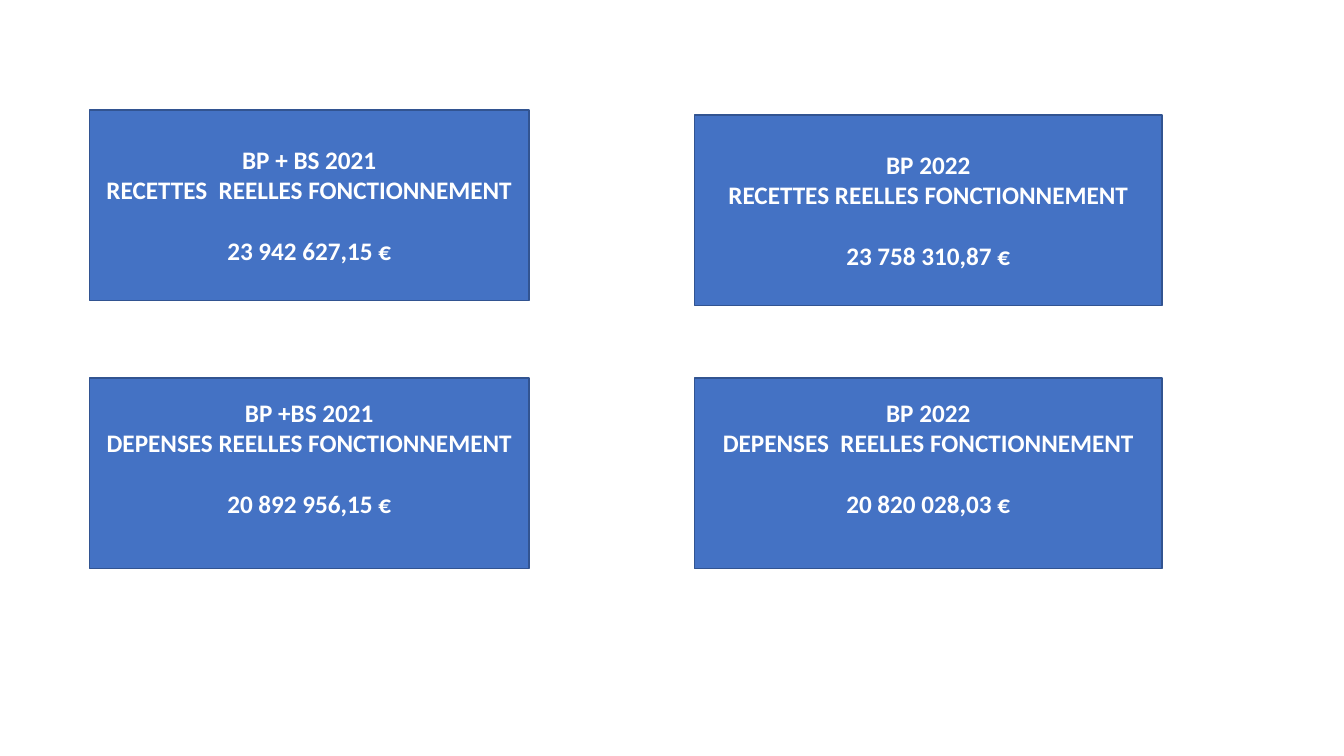
from dataclasses import dataclass

from pptx import Presentation
from pptx import util as u
from pptx.dml.color import RGBColor
from pptx.enum import shapes, text


@dataclass(frozen=True)
class Theme:
    fill: RGBColor = RGBColor(0x44, 0x72, 0xC4)
    border: RGBColor = RGBColor(0x32, 0x54, 0x91)
    ink: RGBColor = RGBColor(0xFF, 0xFF, 0xFF)
    font: str = "Calibri"
    size: u.Pt = u.Pt(18)
    blank_line: u.Pt = u.Pt(22)


theme = Theme()
deck = Presentation()
deck.slide_width, deck.slide_height = u.Cm(33.87), u.Cm(19.05)
slide = deck.slides.add_slide(deck.slide_layouts[6])

# Left edge and width of each budget year
year_2021 = (2.26, 11.07)
year_2022 = (17.5, 11.79)
box_height = 4.8

# The bottom inset lifts the text of the spending boxes by one line
revenue_inset, spending_inset = 0.13, 0.9

budgets = [
    (year_2021, 2.77, revenue_inset,
     ("BP + BS 2021", "RECETTES  REELLES FONCTIONNEMENT", "23 942 627,15 €")),
    (year_2022, 2.9, revenue_inset,
     ("BP 2022", "RECETTES REELLES FONCTIONNEMENT", "23 758 310,87 €")),
    (year_2021, 9.53, spending_inset,
     ("BP +BS 2021", "DEPENSES REELLES FONCTIONNEMENT", "20 892 956,15 €")),
    (year_2022, 9.53, spending_inset,
     ("BP 2022", "DEPENSES  REELLES FONCTIONNEMENT", "20 820 028,03 €")),
]

for (left, width), top, bottom_inset, lines in budgets:
    budget = slide.shapes.add_shape(
        shapes.MSO_SHAPE.RECTANGLE,
        u.Cm(left), u.Cm(top), u.Cm(width), u.Cm(box_height))
    budget.shadow.inherit = False
    budget.fill.solid()
    budget.fill.fore_color.rgb = theme.fill
    budget.line.color.rgb = theme.border
    budget.line.width = u.Pt(1)

    frame = budget.text_frame
    frame.word_wrap = True
    frame.vertical_anchor = text.MSO_ANCHOR.MIDDLE
    frame.margin_bottom = u.Cm(bottom_inset)
    for index, line in enumerate(lines):
        paragraph = frame.paragraphs[0] if index == 0 else frame.add_paragraph()
        paragraph.alignment = text.PP_ALIGN.CENTER
        run = paragraph.add_run()
        run.text = line
        run.font.name = theme.font
        run.font.size = theme.size
        run.font.bold = True
        run.font.color.rgb = theme.ink
    amount = frame.paragraphs[-1]
    amount.space_before = theme.blank_line

deck.save("out.pptx")
